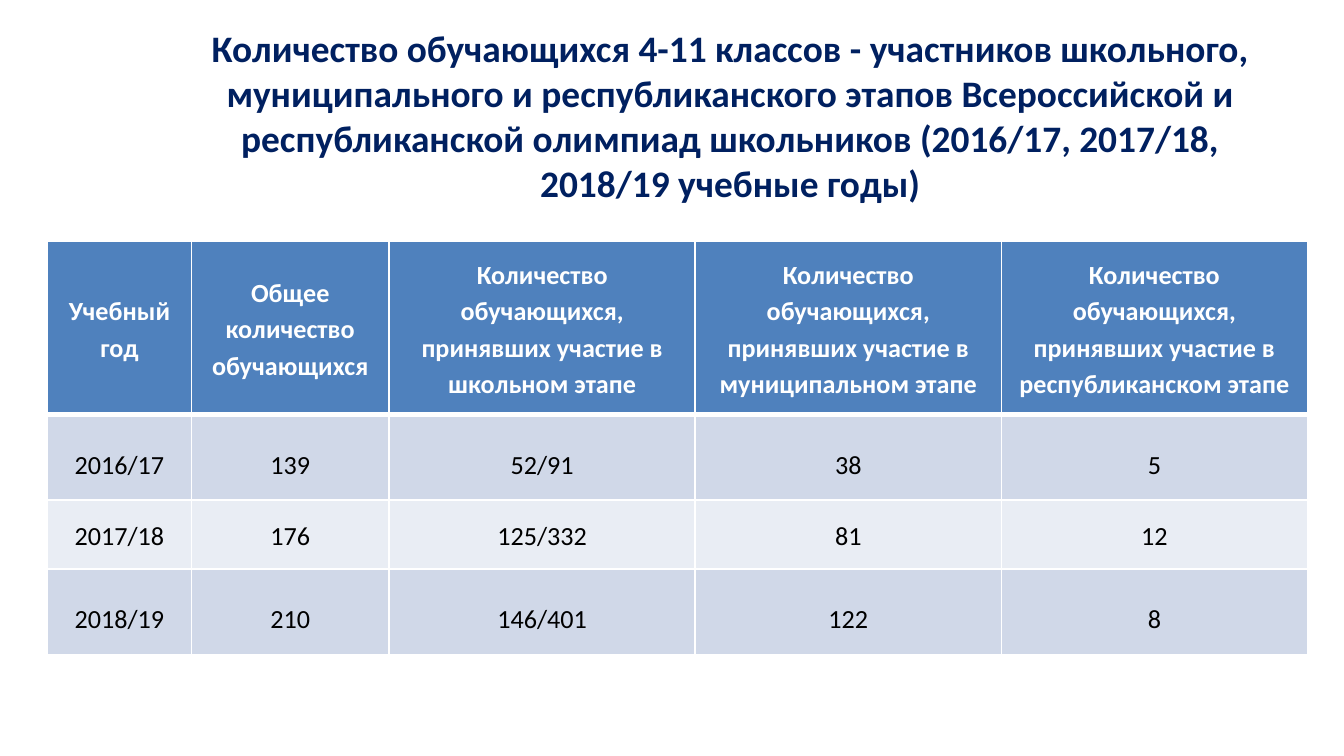
from lxml.etree import SubElement
from pptx import Presentation
from pptx.dml.color import RGBColor
from pptx.enum.text import MSO_ANCHOR, MSO_AUTO_SIZE, PP_ALIGN
from pptx.oxml.ns import qn
from pptx.util import Pt

# Content
TITLE = ("Количество обучающихся 4-11 классов - участников школьного, "
         "муниципального и республиканского этапов Всероссийской и "
         "республиканской олимпиад школьников (2016/17, 2017/18, "
         "2018/19 учебные годы)")
STAGES = ["школьном", "муниципальном", "республиканском"]
HEADER = ["Учебный год", "Общее количество обучающихся"] + [
    f"Количество обучающихся, принявших участие в {stage} этапе" for stage in STAGES]
YEARS = [
    ["2016/17", "139", "52/91", "38", "5"],
    ["2017/18", "176", "125/332", "81", "12"],
    ["2018/19", "210", "146/401", "122", "8"],
]

# Look
COLORS = {"title": "002060", "head": "4F81BD", "odd": "D0D8E8",
          "even": "E9EDF4", "line": "FFFFFF", "head_text": "FFFFFF", "text": "000000"}
TITLE_FONT = {"name": "Calibri", "size": Pt(20), "bold": True}
HEAD_FONT = {"name": "Calibri", "size": Pt(14), "bold": True}
BODY_FONT = HEAD_FONT | {"bold": False}
CELL = {"margin_left": Pt(5), "margin_right": Pt(5), "margin_top": 0,
        "margin_bottom": 0, "vertical_anchor": MSO_ANCHOR.MIDDLE}
# Row styles: height, fill, line spacing, font, text colour
HEAD_ROW = (92.9, "head", 1.15, HEAD_FONT, "head_text")
ODD_ROW = (46.1, "odd", 1.5, BODY_FONT, "text")
EVEN_ROW = (36.8, "even", 1.15, BODY_FONT, "text")
ROWS = [HEAD_ROW, ODD_ROW, EVEN_ROW, ODD_ROW]
COLS = [77, 106] + [164] * len(STAGES)
TABLE_LEFT, TABLE_TOP = 25.5, 129


def rgb(key):
    return RGBColor.from_string(COLORS[key])


def set_attrs(obj, values):
    for name, value in values.items():
        setattr(obj, name, value)


def write(tf, text, font, color, spacing=None):
    p = tf.paragraphs[0]
    p.alignment = PP_ALIGN.CENTER
    p.line_spacing = spacing
    r = p.add_run()
    r.text = text
    set_attrs(r.font, font)
    r.font.color.rgb = rgb(color)


def add_borders(cell, widths):
    tcPr = cell._tc.get_or_add_tcPr()
    for side, width in widths.items():
        ln = SubElement(tcPr, qn(f"a:ln{side}"), w=str(Pt(width)))
        fill = SubElement(ln, qn("a:solidFill"))
        SubElement(fill, qn("a:srgbClr"), val=COLORS["line"])


prs = Presentation()
prs.slide_width, prs.slide_height = Pt(720), Pt(405)
s = prs.slides.add_slide(prs.slide_layouts[6])

# Title
tf = s.shapes.add_textbox(Pt(93.6), Pt(10), Pt(595.4), Pt(104.4)).text_frame
tf.word_wrap = True
tf.auto_size = MSO_AUTO_SIZE.SHAPE_TO_FIT_TEXT
write(tf, TITLE, TITLE_FONT, "title")

# Table
table = s.shapes.add_table(
    len(ROWS), len(COLS), Pt(TABLE_LEFT), Pt(TABLE_TOP),
    Pt(sum(COLS)), Pt(sum(row[0] for row in ROWS))).table
for col, width in zip(table.columns, COLS):
    col.width = Pt(width)

for i, (texts, style) in enumerate(zip([HEADER] + YEARS, ROWS)):
    height, fill, spacing, font, color = style
    table.rows[i].height = Pt(height)
    # A thick rule separates the header from the years
    borders = {"L": 1, "R": 1, "T": 3 if i == 1 else 1, "B": 3 if i == 0 else 1}
    for j, text in enumerate(texts):
        cell = table.cell(i, j)
        set_attrs(cell, CELL)
        add_borders(cell, borders)
        cell.fill.solid()
        cell.fill.fore_color.rgb = rgb(fill)
        write(cell.text_frame, text, font, color, spacing)

prs.save("out.pptx")
